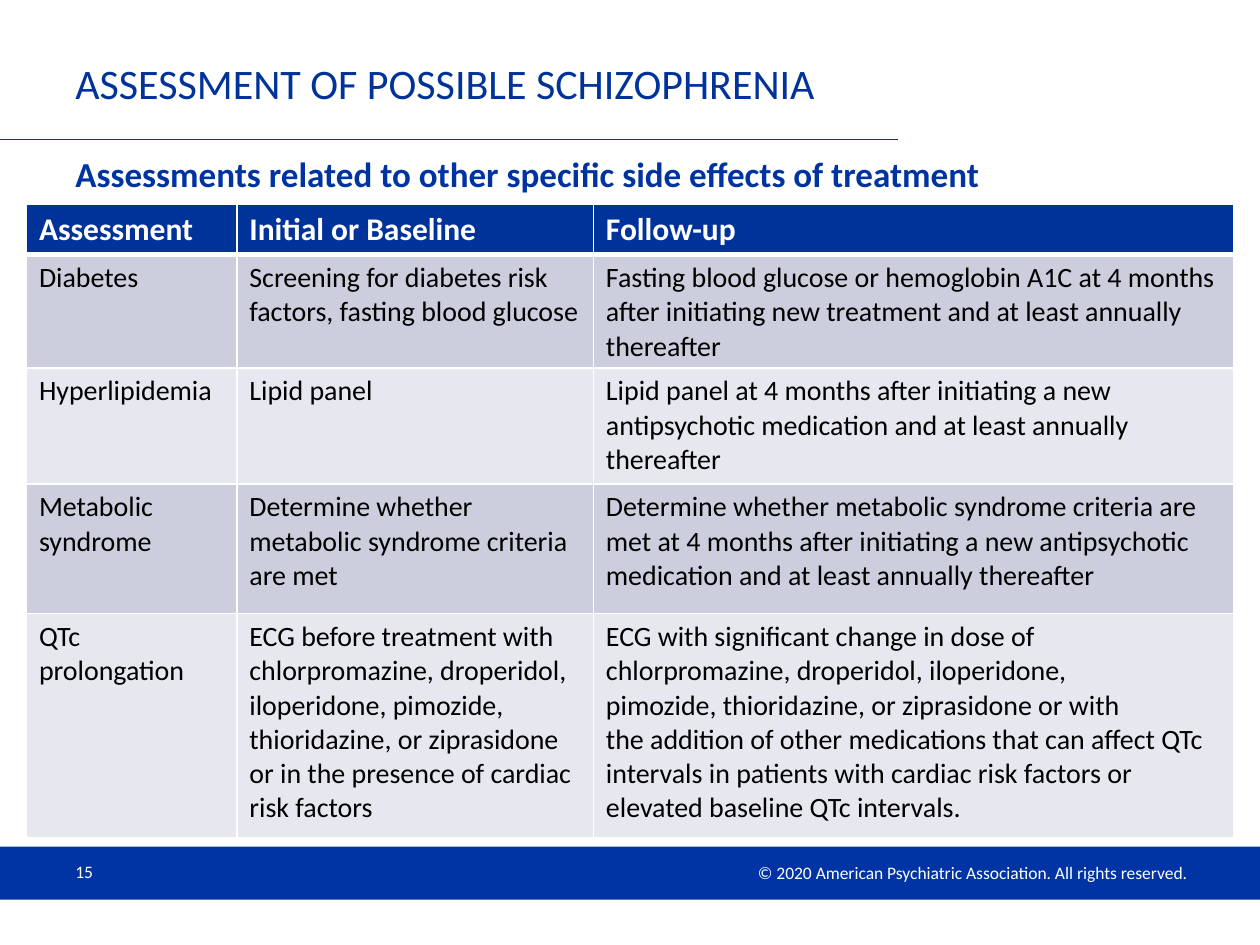
import pptx
import pptx.util
import pptx.dml.color
import pptx.enum.shapes
import pptx.enum.text
import pptx.oxml
import pptx.oxml.ns
from pptx.util import Inches

NAVY = pptx.dml.color.RGBColor(0x00, 0x33, 0x99)
BLUE = pptx.dml.color.RGBColor(0x00, 0x33, 0xA3)
SUBTITLE_BLUE = pptx.dml.color.RGBColor(0x00, 0x33, 0xA2)
DARK_BAND = pptx.dml.color.RGBColor(0xCC, 0xCE, 0xDE)
LIGHT_BAND = pptx.dml.color.RGBColor(0xE7, 0xE8, 0xEF)
WHITE = pptx.dml.color.RGBColor(0xFF, 0xFF, 0xFF)
BLACK = pptx.dml.color.RGBColor(0x00, 0x00, 0x00)
MIDDLE = pptx.enum.text.MSO_ANCHOR.MIDDLE
TOP = pptx.enum.text.MSO_ANCHOR.TOP
LEFT = pptx.enum.text.PP_ALIGN.LEFT
RIGHT = pptx.enum.text.PP_ALIGN.RIGHT


def write(frame, text, size, color, bold=False, align=LEFT, anchor=TOP):
    frame.word_wrap = True
    frame.vertical_anchor = anchor
    frame.text = text
    for paragraph in frame.paragraphs:
        paragraph.alignment = align
        paragraph.font.name = "Calibri"
        paragraph.font.size = pptx.util.Pt(size)
        paragraph.font.bold = bold
        paragraph.font.color.rgb = color


def add_border(cell, side, points):
    cell._tc.get_or_add_tcPr().append(pptx.oxml.parse_xml(
        f'<a:{side} {pptx.oxml.ns.nsdecls("a")} w="{pptx.util.Pt(points)}">'
        f'<a:solidFill><a:srgbClr val="{WHITE}"/></a:solidFill></a:{side}>'))


deck = pptx.Presentation()
deck.slide_width = Inches(10)
deck.slide_height = Inches(7.5)
slide = deck.slides.add_slide(deck.slide_layouts[6])

footer_bar = slide.shapes.add_shape(
    pptx.enum.shapes.MSO_SHAPE.RECTANGLE, 0, Inches(6.72), Inches(10), Inches(0.42))
footer_bar.shadow.inherit = False
footer_bar.fill.solid()
footer_bar.fill.fore_color.rgb = BLUE
footer_bar.line.fill.background()

title_rule = slide.shapes.add_connector(
    pptx.enum.shapes.MSO_CONNECTOR.STRAIGHT, 0, Inches(1.11), Inches(7.13), Inches(1.11))
title_rule.line.color.rgb = NAVY
title_rule.line.width = pptx.util.Pt(0.75)
title_rule._element.spPr.append(pptx.oxml.parse_xml(
    f'<a:effectLst {pptx.oxml.ns.nsdecls("a")}/>'))

texts = [
    ("© 2020 American Psychiatric Association. All rights reserved. ",
     (5.18, 6.79, 4.37, 0.27), dict(size=10, color=WHITE, align=RIGHT, anchor=MIDDLE)),
    ("15", (0.5, 6.72, 2.33, 0.4), dict(size=10, color=WHITE, anchor=MIDDLE)),
    ("ASSESSMENT OF POSSIBLE SCHIZOPHRENIA",
     (0.5, 0.34, 6.63, 0.64), dict(size=24, color=NAVY, anchor=MIDDLE)),
    ("Assessments related to other specific side effects of treatment",
     (0.5, 1.16, 8.55, 0.45), dict(size=20, color=SUBTITLE_BLUE, bold=True)),
]
for text, place, style in texts:
    box = slide.shapes.add_textbox(*map(Inches, place))
    write(box.text_frame, text, **style)

assessments = [
    ("Assessment", "Initial or Baseline", "Follow-up"),
    ("Diabetes",
     "Screening for diabetes risk factors, fasting blood glucose",
     "Fasting blood glucose or hemoglobin A1C at 4 months after initiating new treatment "
     "and at least annually thereafter"),
    ("Hyperlipidemia",
     "Lipid panel",
     "Lipid panel at 4 months after initiating a new antipsychotic medication "
     "and at least annually thereafter"),
    ("Metabolic syndrome",
     "Determine whether metabolic syndrome criteria are met",
     "Determine whether metabolic syndrome criteria are met at 4 months after initiating "
     "a new antipsychotic medication and at least annually thereafter"),
    ("QTc prolongation",
     "ECG before treatment with chlorpromazine, droperidol, iloperidone, pimozide, "
     "thioridazine, or ziprasidone or in the presence of cardiac risk factors",
     "ECG with significant change in dose of chlorpromazine, droperidol, iloperidone,\n"
     "pimozide, thioridazine, or ziprasidone or with\n"
     "the addition of other medications that can affect QTc intervals in patients "
     "with cardiac risk factors or elevated baseline QTc intervals."),
]
column_widths = [1.67, 2.83, 5.08]
row_heights = [0.39, 0.9, 0.92, 1.03, 1.78]

table = slide.shapes.add_table(
    len(row_heights), len(column_widths), Inches(0.21), Inches(1.62),
    Inches(sum(column_widths)), Inches(sum(row_heights))).table
for column, width in zip(table.columns, column_widths):
    column.width = Inches(width)
for r, (row, height) in enumerate(zip(assessments, row_heights)):
    table.rows[r].height = Inches(height)
    header = r == 0
    band = NAVY if header else DARK_BAND if r % 2 else LIGHT_BAND
    for c, text in enumerate(row):
        cell = table.cell(r, c)
        write(cell.text_frame, text, size=18 if header else 16,
              color=WHITE if header else BLACK, bold=header)
        for side in ("lnL", "lnR", "lnT", "lnB"):
            thick = (r, side) in ((0, "lnB"), (1, "lnT"))
            add_border(cell, side, 3 if thick else 1)
        cell.fill.solid()
        cell.fill.fore_color.rgb = band

deck.save("out.pptx")
